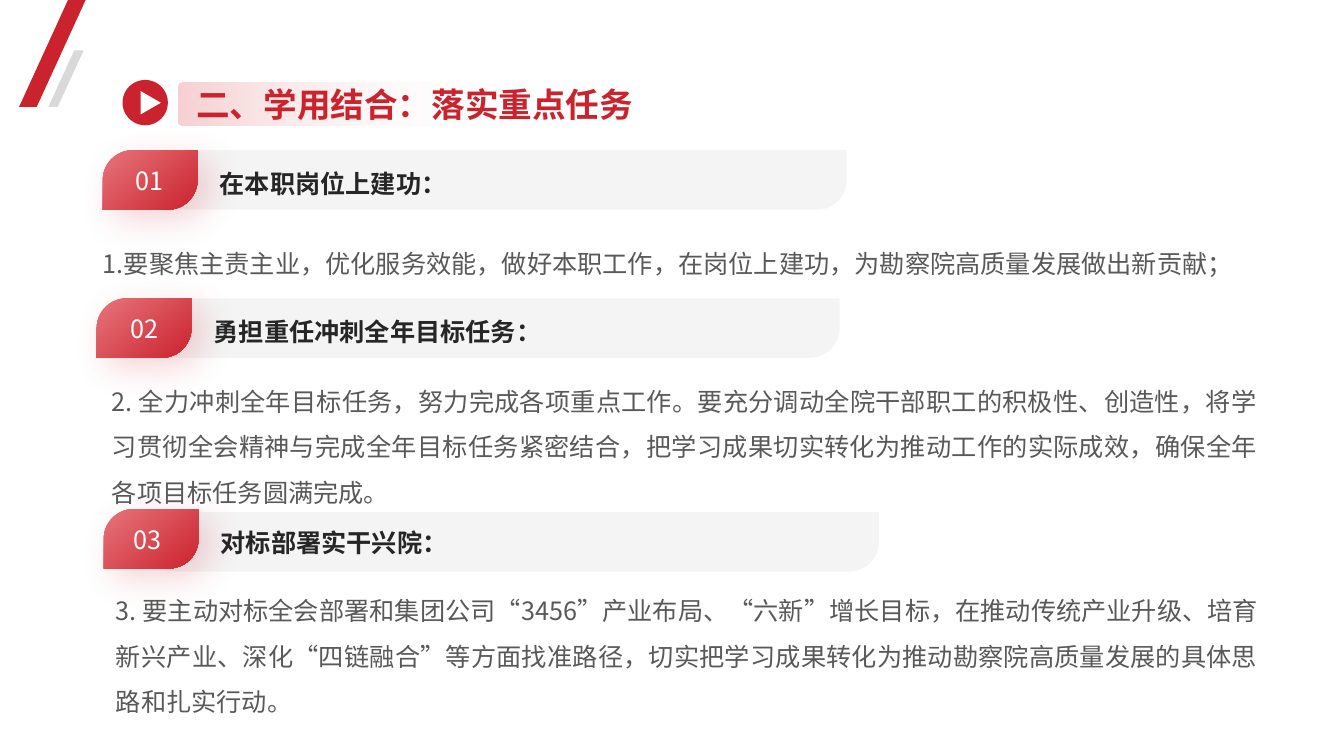
from dataclasses import dataclass

from lxml import etree
from pptx import Presentation
from pptx.dml.color import RGBColor
from pptx.enum.shapes import MSO_SHAPE
from pptx.enum.text import MSO_ANCHOR, MSO_AUTO_SIZE, PP_ALIGN
from pptx.oxml.ns import qn
from pptx.util import Pt

PARALLELOGRAM = MSO_SHAPE.PARALLELOGRAM
ROUNDED = MSO_SHAPE.ROUNDED_RECTANGLE
LEAF = MSO_SHAPE.ROUND_2_DIAG_RECTANGLE
OVAL = MSO_SHAPE.OVAL
TRIANGLE = MSO_SHAPE.ISOSCELES_TRIANGLE
TOP, MIDDLE = MSO_ANCHOR.TOP, MSO_ANCHOR.MIDDLE
LEFT, CENTER, JUSTIFY = PP_ALIGN.LEFT, PP_ALIGN.CENTER, PP_ALIGN.JUSTIFY
GROW = MSO_AUTO_SIZE.SHAPE_TO_FIT_TEXT


@dataclass(frozen=True)
class Theme:
    """Colours, font and type sizes of the slide."""

    font: str = "Noto Sans CJK SC"
    red: str = "CB232D"
    rose: str = "E7747B"
    blush: str = "F7D1D3"
    cream: str = "FBFAF8"
    silver: str = "D9D9D9"
    pale: str = "F2F2F2"
    white: str = "FFFFFF"
    ink: str = "262626"
    grey: str = "595959"
    title: int = 24
    body: int = 18


THEME = Theme()

SECTIONS = [
    {
        "number": "01", "heading": "在本职岗位上建功：",
        "tag": (73.44, 107.28), "bar": (96.5, 107.28),
        "body": (73.44, 166.3, 814.3, 64.8), "align": LEFT, "number_left": 85.7,
        "text": "1.要聚焦主责主业，优化服务效能，做好本职工作，在岗位上建功，为勘察院高质量发展做出新贡献；",
    },
    {
        "number": "02", "heading": "勇担重任冲刺全年目标任务：",
        "tag": (69.12, 213.12), "bar": (91.44, 213.12),
        "body": (79.92, 265, 818.6, 64.8), "align": JUSTIFY, "number_left": 82.1,
        "text": "2. 全力冲刺全年目标任务，努力完成各项重点工作。要充分调动全院干部职工的积极性、创造性，"
                "将学习贯彻全会精神与完成全年目标任务紧密结合，把学习成果切实转化为推动工作的实际成效，"
                "确保全年各项目标任务圆满完成。",
    },
    {
        "number": "03", "heading": "对标部署实干兴院：",
        "tag": (74.16, 363.6), "bar": (119.52, 365.76),
        "body": (82.8, 414.7, 815.8, 100.1), "align": JUSTIFY, "number_left": 84.2,
        "text": "3. 要主动对标全会部署和集团公司“3456”产业布局、“六新”增长目标，"
                "在推动传统产业升级、培育新兴产业、深化“四链融合”等方面找准路径，"
                "切实把学习成果转化为推动勘察院高质量发展的具体思路和扎实行动。",
    },
]


def add_alpha(colour, percent):
    """Set the opacity of a colour element."""
    etree.SubElement(colour, qn("a:alpha"), val=str(percent * 1000))


def add_figure(page, kind, frame, colour=None, adjustments=()):
    """Add a preset shape without line or shadow."""
    shape = page.shapes.add_shape(kind, *map(Pt, frame))
    shape.shadow.inherit = False
    shape.line.fill.background()
    for index, value in enumerate(adjustments):
        shape.adjustments[index] = value
    if colour:
        shape.fill.solid()
        shape.fill.fore_color.rgb = RGBColor.from_string(colour)
    return shape


def fill_gradient(shape, stops, angle):
    """Fill a shape with two colours, turning clockwise by the angle."""
    shape.fill.gradient()
    shape.fill.gradient_angle = -angle % 360
    for stop, (position, colour) in zip(shape.fill.gradient_stops, stops):
        stop.position = position
        stop.color.rgb = RGBColor.from_string(colour)


def add_glow_shadow(shape, colour):
    """Give a shape a soft coloured shadow."""
    effects = shape._element.spPr.find(qn("a:effectLst"))
    shadow = etree.SubElement(
        effects, qn("a:outerShdw"), blurRad=str(Pt(25)), dist=str(Pt(10)),
        dir=str(40 * 60000), algn="ctr", rotWithShape="0")
    add_alpha(etree.SubElement(shadow, qn("a:srgbClr"), val=colour), 20)


def add_text(page, frame, text, colour, size=THEME.body, bold=False, align=LEFT,
             anchor=TOP, spacing=1.0, inset=(0, 0)):
    """Add a one-paragraph text box."""
    box = page.shapes.add_textbox(*map(Pt, frame))
    text_frame = box.text_frame
    text_frame.word_wrap = True
    text_frame.vertical_anchor = anchor
    text_frame.margin_left = text_frame.margin_right = Pt(inset[0])
    text_frame.margin_top = text_frame.margin_bottom = Pt(inset[1])
    para = text_frame.paragraphs[0]
    para.text = text
    para.alignment = align
    para.line_spacing = spacing
    font = para.font
    font.name = THEME.font
    font.size = Pt(size)
    font.bold = bold
    font.color.rgb = RGBColor.from_string(colour)
    properties = para._p.pPr.find(qn("a:defRPr"))
    etree.SubElement(properties, qn("a:ea"), typeface=THEME.font)
    return box


def add_title(page):
    """Draw the corner stripes and the title with its play button."""
    add_figure(page, PARALLELOGRAM, (13.68, 0, 47.52, 76.32), THEME.red, [0.735])
    add_figure(page, PARALLELOGRAM, (34.56, 36, 25.2, 40.32), THEME.silver, [0.735])
    band = add_figure(page, ROUNDED, (127.6, 59.3, 218.9, 30.5), adjustments=[0.083])
    fill_gradient(band, [(0, THEME.blush), (1, THEME.cream)], 0)
    add_alpha(list(band._element.spPr.iter(qn("a:srgbClr")))[-1], 0)
    title = add_text(page, (133.2, 56.2, 331.2, 36), "二、学用结合：落实重点任务",
                     THEME.red, THEME.title, bold=True, inset=(7.2, 3.6))
    title.text_frame.word_wrap = False
    title.text_frame.auto_size = GROW
    add_figure(page, OVAL, (87.5, 57.1, 32.4, 32.4), THEME.red)
    arrow = add_figure(page, TRIANGLE, (99.4, 66.2, 16.6, 14.4), THEME.white)
    arrow.rotation = 90


def add_section(page, section):
    """Draw a numbered heading bar and the text below it."""
    left, top = section["tag"]
    label_top = top + 6.5
    bar = add_figure(page, LEAF, (*section["bar"], 508.3, 42.5), THEME.pale, [0.5, 0])
    add_alpha(bar._element.spPr.find(".//" + qn("a:srgbClr")), 80)
    tag = add_figure(page, LEAF, (left, top, 67.7, 42.5), adjustments=[0.5, 0])
    fill_gradient(tag, [(0.01, THEME.rose), (1, THEME.red)], 50)
    add_glow_shadow(tag, THEME.red)
    add_text(page, section["body"], section["text"], THEME.grey,
             align=section["align"], spacing=1.5)
    add_text(page, (left + 83.5, label_top, 423.4, 28.1), section["heading"],
             THEME.ink, bold=True, anchor=MIDDLE, spacing=1.3)
    add_text(page, (section["number_left"], label_top, 42.5, 28.1), section["number"],
             THEME.white, align=CENTER, anchor=MIDDLE, spacing=1.1)


def main():
    """Build the slide and save the deck."""
    deck = Presentation()
    deck.slide_width, deck.slide_height = Pt(960), Pt(540)
    page = deck.slides.add_slide(deck.slide_layouts[6])
    add_title(page)
    for section in SECTIONS:
        add_section(page, section)
    deck.save("out.pptx")


if __name__ == "__main__":
    main()
